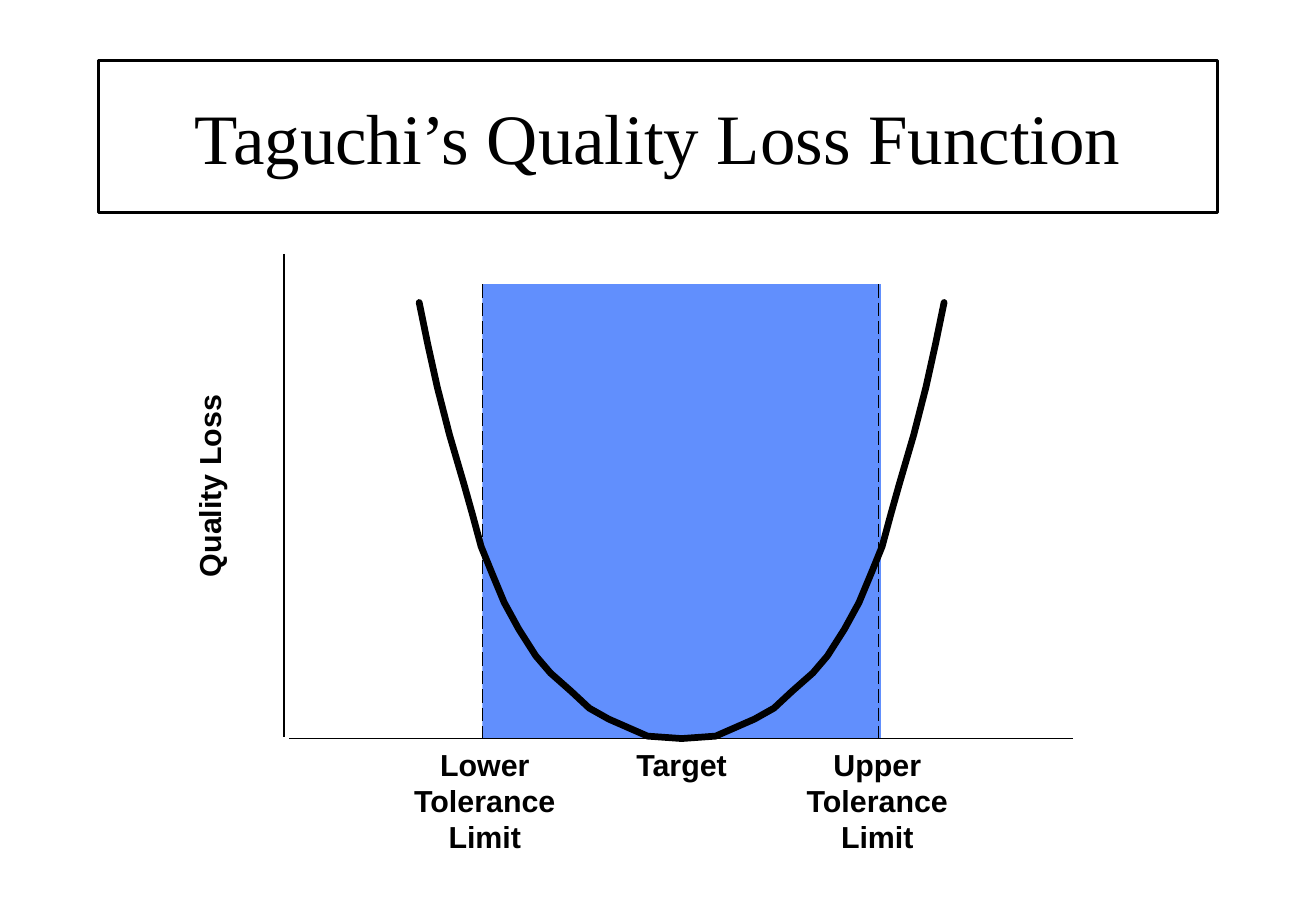
from pptx import Presentation
from pptx import util as u
from pptx.dml.color import RGBColor
from pptx.enum import dml, shapes, text
from pptx.oxml import ns, xmlchemy

BLACK = RGBColor(0x00, 0x00, 0x00)
BAND_BLUE = RGBColor(0x61, 0x8F, 0xFD)

TARGET_X = 5.61
LOSS_LEFT = [
    (3.45, 2.49), (3.52, 2.83), (3.6, 3.19), (3.7, 3.58), (3.82, 3.99), (3.89, 4.24),
    (3.96, 4.5), (4.05, 4.72), (4.15, 4.96), (4.27, 5.18), (4.41, 5.4), (4.53, 5.54),
    (4.7, 5.69), (4.85, 5.83), (5.01, 5.92), (5.17, 5.99), (5.33, 6.06), (TARGET_X, 6.08),
]
LOSS_RIGHT = [(2 * TARGET_X - x, y) for x, y in LOSS_LEFT]


def write_text(frame, content, font="Arial", size=18, bold=True, wrap=False):
    """Fill a text frame with centred text, one paragraph per line."""
    frame.word_wrap = wrap
    frame.auto_size = text.MSO_AUTO_SIZE.NONE
    frame.margin_left = frame.margin_right = u.Inches(0.1)
    frame.margin_top = frame.margin_bottom = u.Inches(0.05)
    for index, line in enumerate(content.split("\n")):
        para = frame.add_paragraph() if index else frame.paragraphs[0]
        para.alignment = text.PP_ALIGN.CENTER
        span = para.add_run()
        span.text = line
        span.font.name = font
        span.font.size = u.Pt(size)
        span.font.bold = bold
        span.font.color.rgb = BLACK


class ChartPage:
    def __init__(self, deck):
        self.page = deck.slides.add_slide(deck.slide_layouts[5])
        self.shapes = self.page.shapes

    def outline(self, line, width):
        line.color.rgb = BLACK
        line.width = u.Pt(width)

    def title(self, content, left, top, width, height):
        box = self.shapes.title
        box.left, box.top = u.Inches(left), u.Inches(top)
        box.width, box.height = u.Inches(width), u.Inches(height)
        self.outline(box.line, 2)
        box.text_frame.vertical_anchor = text.MSO_ANCHOR.MIDDLE
        write_text(box.text_frame, content, font="Times New Roman", size=42,
                   bold=False, wrap=True)

    def band(self, left, top, width, height):
        box = self.shapes.add_shape(shapes.MSO_SHAPE.RECTANGLE, u.Inches(left),
                                    u.Inches(top), u.Inches(width), u.Inches(height))
        box.shadow.inherit = False
        box.fill.solid()
        box.fill.fore_color.rgb = BAND_BLUE
        box.line.fill.background()

    def line(self, x1, y1, x2, y2, dash=None):
        connector = self.shapes.add_connector(
            shapes.MSO_CONNECTOR.STRAIGHT, u.Inches(x1), u.Inches(y1),
            u.Inches(x2), u.Inches(y2))
        self.outline(connector.line, 1)
        if dash:
            connector.line.dash_style = dash
        connector.element.spPr.append(xmlchemy.OxmlElement("a:effectLst"))

    def curve(self, points):
        start, *rest = [(u.Inches(x), u.Inches(y)) for x, y in points]
        builder = self.shapes.build_freeform(*start)
        builder.add_line_segments(rest, close=False)
        curve = builder.convert_to_shape()
        curve.shadow.inherit = False
        curve.fill.background()
        self.outline(curve.line, 4)
        curve.element.spPr.find(ns.qn("a:ln")).set("cap", "rnd")

    def label(self, content, left, top, width, height, rotation=0):
        box = self.shapes.add_textbox(u.Inches(left), u.Inches(top),
                                      u.Inches(width), u.Inches(height))
        box.rotation = rotation
        write_text(box.text_frame, content)


def main():
    deck = Presentation()
    deck.slide_width, deck.slide_height = u.Inches(10.83), u.Inches(7.5)
    page = ChartPage(deck)

    # Title and tolerance band
    page.title("Taguchi’s Quality Loss Function", 0.81, 0.5, 9.21, 1.25)
    page.band(3.97, 2.34, 3.28, 3.74)

    # Axes and tolerance limits
    page.line(2.34, 2.09, 2.34, 6.07)
    page.line(2.38, 6.08, 8.83, 6.08)
    for limit_x in (3.97, 7.23):
        page.line(limit_x, 2.34, limit_x, 6.08, dml.MSO_LINE.LONG_DASH)

    # Loss curve, mirrored about the target
    for half in (LOSS_LEFT, LOSS_RIGHT):
        page.curve(half)

    # Labels
    page.label("Target", 5.13, 6.09, 0.96, 0.4)
    page.label("Lower\nTolerance\nLimit", 3.3, 6.09, 1.38, 1)
    page.label("Upper\nTolerance\nLimit", 6.53, 6.09, 1.38, 1)
    page.label("Quality Loss", 0.87, 3.8, 1.7, 0.4, rotation=270)

    deck.save("out.pptx")


if __name__ == "__main__":
    main()
